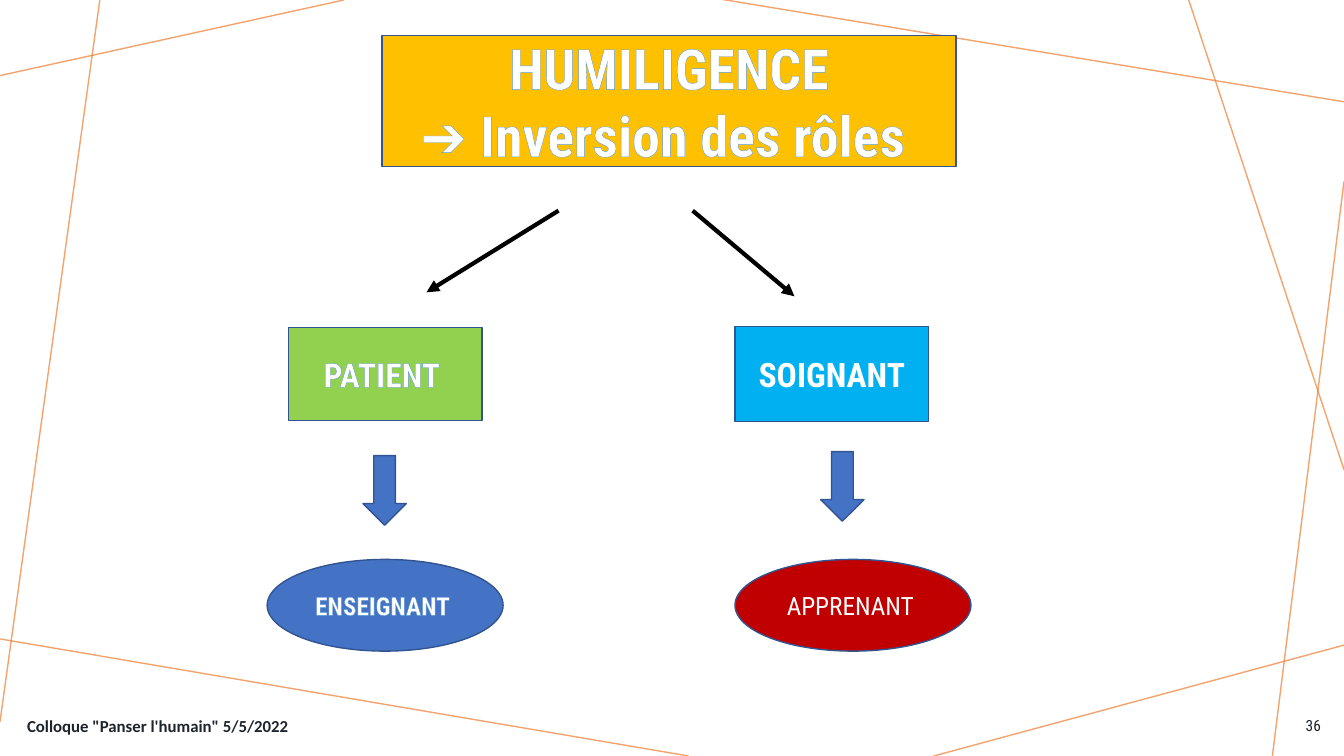
"""Build the slide on the reversal of roles between patient and carer."""
from lxml import etree
from pptx import Presentation
from pptx.dml.color import RGBColor
from pptx.enum.shapes import MSO_CONNECTOR, MSO_SHAPE
from pptx.enum.text import MSO_ANCHOR, MSO_AUTO_SIZE, PP_ALIGN
from pptx.oxml.ns import qn
from pptx.util import Inches, Pt

RECTANGLE, OVAL, DOWN_ARROW = MSO_SHAPE.RECTANGLE, MSO_SHAPE.OVAL, MSO_SHAPE.DOWN_ARROW
STRAIGHT = MSO_CONNECTOR.STRAIGHT
MIDDLE, NO_FIT = MSO_ANCHOR.MIDDLE, MSO_AUTO_SIZE.NONE
LEFT, CENTER, RIGHT = PP_ALIGN.LEFT, PP_ALIGN.CENTER, PP_ALIGN.RIGHT

WHITE = RGBColor(0xFF, 0xFF, 0xFF)
BLACK = RGBColor(0x00, 0x00, 0x00)
INK = RGBColor(0x1D, 0x24, 0x2E)
ORANGE = RGBColor(0xED, 0x7D, 0x31)
GOLD = RGBColor(0xFF, 0xC0, 0x00)
GREEN = RGBColor(0x92, 0xD0, 0x50)
SKY = RGBColor(0x00, 0xB0, 0xF0)
BLUE = RGBColor(0x44, 0x72, 0xC4)
RED = RGBColor(0xC0, 0x00, 0x00)
BORDER = RGBColor(0x32, 0x54, 0x91)
TEXT_OUTLINE = RGBColor(0x5B, 0x9B, 0xD5)

ROBOTO = "Roboto Condensed"
TITLE = "HUMILIGENCE\n➔ Inversion des rôles "
TITLE_BOX = (3.79, 0.35, 5.69, 1.3)

BACKGROUND_LINES = [
    (3.41, 0, 0, 0.75),
    (0.99, 0, 0, 7.16),
    (6.83, 7.5, -0.05, 6.33),
    (13.33, 6.4, 9.26, 7.5),
    (13.33, 1.8, 12.62, 7.5),
    (13.33, 4.66, 11.79, 0),
    (13.33, 1.01, 7.14, -0.01),
]
BRANCH_ARROWS = [(5.54, 2.09, 4.23, 2.9), (6.87, 2.09, 7.88, 2.94)]
DOWN_ARROWS = [(8.14, 4.48, 0.43, 0.69), (3.6, 4.52, 0.43, 0.69)]
ROLES = [
    ("PATIENT ", RECTANGLE, (2.86, 3.25, 1.92, 0.92), GREEN, 24, True, True),
    ("SOIGNANT", RECTANGLE, (7.29, 3.24, 1.92, 0.94), SKY, 24, True, False),
    ("ENSEIGNANT ", OVAL, (2.65, 5.55, 2.34, 0.91), BLUE, 18, True, True),
    ("APPRENANT ", OVAL, (7.29, 5.55, 2.34, 0.91), RED, 18, False, False),
]
FOOTERS = [
    ("Colloque \"Panser l'humain\" 5/5/2022", (0.17, 7, 4.92, 0.4), LEFT, "Calibri", 12, True),
    ("36", (12.69, 7, 0.51, 0.4), RIGHT, ROBOTO, 11, False),
]


def inches(values):
    return [Inches(value) for value in values]


def add_line(slide, ends, color, width):
    connector = slide.shapes.add_connector(STRAIGHT, *inches(ends))
    connector.line.color.rgb = color
    connector.line.width = Pt(width)
    etree.SubElement(connector._element.spPr, qn("a:effectLst"))
    return connector


def paint(shape, fill):
    shape.fill.solid()
    shape.fill.fore_color.rgb = fill
    shape.line.color.rgb = BORDER
    shape.line.width = Pt(1)
    shape.shadow.inherit = False


def write(shape, text, alignment, outlined=False, **font_format):
    frame = shape.text_frame
    frame.text = text
    frame.word_wrap = True
    frame.auto_size = NO_FIT
    frame.vertical_anchor = MIDDLE
    color = font_format.pop("color")
    for paragraph in frame.paragraphs:
        paragraph.alignment = alignment
        for run in paragraph.runs:
            for name, value in font_format.items():
                setattr(run.font, name, value)
            run.font.color.rgb = color
            if outlined:
                outline = etree.Element(qn("a:ln"), w=str(Pt(0.8)))
                fill = etree.SubElement(outline, qn("a:solidFill"))
                etree.SubElement(fill, qn("a:srgbClr"), val=str(TEXT_OUTLINE))
                run.font._element.insert(0, outline)


def main():
    presentation = Presentation()
    presentation.slide_width, presentation.slide_height = inches((13.33, 7.5))
    slide = presentation.slides.add_slide(presentation.slide_layouts[5])
    shapes = slide.shapes

    for ends in BACKGROUND_LINES:
        line = add_line(slide, ends, ORANGE, 1)
        color = line._element.spPr.find(".//" + qn("a:srgbClr"))
        etree.SubElement(color, qn("a:alpha"), val="70000")

    title = shapes.title
    shapes._spTree.append(title._element)
    title.left, title.top, title.width, title.height = inches(TITLE_BOX)
    paint(title, GOLD)
    write(title, TITLE, CENTER, True, name=ROBOTO, size=Pt(40), bold=True, color=WHITE)

    for ends in BRANCH_ARROWS:
        arrow = add_line(slide, ends, BLACK, 3)
        etree.SubElement(arrow.line._ln, qn("a:tailEnd"), type="triangle")

    for box in DOWN_ARROWS:
        paint(shapes.add_shape(DOWN_ARROW, *inches(box)), BLUE)

    for text, kind, box, fill, size, bold, outlined in ROLES:
        role = shapes.add_shape(kind, *inches(box))
        paint(role, fill)
        write(role, text, CENTER, outlined, name=ROBOTO, size=Pt(size), bold=bold, color=WHITE)

    for text, box, alignment, font, size, bold in FOOTERS:
        footer = shapes.add_textbox(*inches(box))
        write(footer, text, alignment, name=font, size=Pt(size), bold=bold, color=INK)

    presentation.save("out.pptx")


if __name__ == "__main__":
    main()
